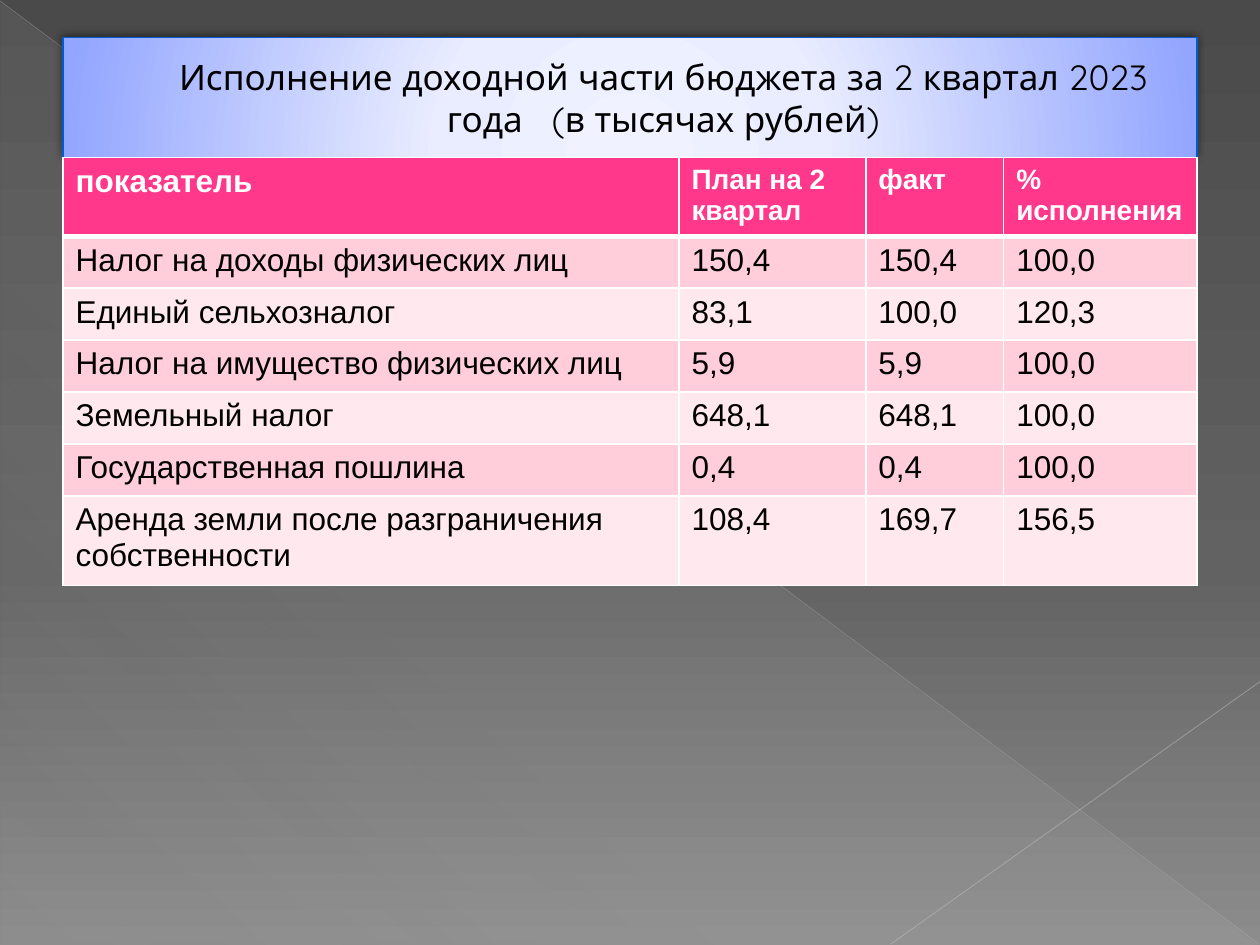
from lxml.etree import SubElement
from pptx import Presentation
from pptx.dml.color import RGBColor
from pptx.enum.shapes import MSO_CONNECTOR, MSO_SHAPE
from pptx.enum.text import MSO_ANCHOR, MSO_AUTO_SIZE, PP_ALIGN
from pptx.oxml import parse_xml
from pptx.oxml.ns import nsdecls, qn
from pptx.util import Pt


def rgb(code):
    return RGBColor.from_string(code)


def node(tag, inner="", attrs=""):
    return parse_xml(f"<a:{tag} {nsdecls('a')} {attrs}>{inner}</a:{tag}>")


def tint(code, alpha=100):
    return f'<a:srgbClr val="{code}"><a:alpha val="{alpha * 1000}"/></a:srgbClr>'


def stroke(tag, code, width):
    fill = f"<a:solidFill>{tint(code)}</a:solidFill>"
    return node(tag, fill, f'w="{Pt(width)}"')


def grade(host, stops, shade):
    """Swap the solid fill inside host for a gradient."""
    marks = "".join(f'<a:gs pos="{pos * 1000}">{tint(*color)}</a:gs>'
                    for pos, *color in stops)
    grad = node("gradFill", f"<a:gsLst>{marks}</a:gsLst>{shade}")
    host.replace(host.find(qn("a:solidFill")), grad)


def slant(angle):
    return f'<a:lin ang="{angle * 60000}" scaled="0"/>'


class Deck:
    black, white, pink = "000000", "FFFFFF", "FF388C"
    bands = "FFCEDA", "FFE8EE"
    face, head = "Arial", "Quicksand"

    def __init__(self):
        self.file = Presentation()
        self.file.slide_width, self.file.slide_height = Pt(720), Pt(540)
        self.slide = self.file.slides.add_slide(self.file.slide_layouts[5])
        self.shapes = self.slide.shapes

    def back(self, stops):
        self.slide.background.fill.solid()
        grade(self.slide.element.xpath(".//p:bgPr")[0], stops, slant(90))

    def wedge(self, box, stops):
        shape = self.shapes.add_shape(MSO_SHAPE.RIGHT_TRIANGLE, *map(Pt, box))
        shape.shadow.inherit = False
        shape.line.fill.background()
        shape.fill.solid()
        grade(shape.element.spPr, stops, slant(133))

    def line(self, ends, color, width, alpha):
        link = self.shapes.add_connector(MSO_CONNECTOR.STRAIGHT, *map(Pt, ends))
        link.line.width = Pt(width)
        link.line.color.rgb = rgb(color)
        mark = link.element.xpath(".//a:ln//a:srgbClr")[0]
        SubElement(mark, qn("a:alpha"), val=str(alpha * 1000))
        SubElement(link.element.spPr, qn("a:effectLst"))

    def title(self, text, box, stops):
        shape = self.shapes.title
        self.shapes.element.append(shape.element)  # bring to the front
        shape.left, shape.top, shape.width, shape.height = map(Pt, box)
        shape.fill.solid()
        grade(shape.element.spPr, stops,
              '<a:path path="circle"><a:fillToRect l="50000" t="155000" '
              'r="50000" b="-55000"/></a:path>')
        shape.line.color.rgb = rgb("005BD3")
        shape.line.width = Pt(0.75)
        shade = node("outerShdw", tint(self.black, 50),
                     f'blurRad="{Pt(5)}" dist="{Pt(2)}" dir="{245 * 60000}" '
                     'rotWithShape="0"')
        SubElement(shape.element.spPr, qn("a:effectLst")).append(shade)
        frame = shape.text_frame
        frame.text = text
        frame.word_wrap = True
        frame.auto_size = MSO_AUTO_SIZE.NONE
        frame.vertical_anchor = MSO_ANCHOR.MIDDLE
        para = frame.paragraphs[0]
        para.alignment = PP_ALIGN.CENTER
        self.font(para, 20, self.black, self.head)
        props = para._p.get_or_add_pPr()
        props.set("marL", str(Pt(38)))
        props.set("indent", "0")
        props.find(qn("a:defRPr")).insert(0, stroke("ln", "B12761", 0.5))

    def font(self, para, size, color, name, bold=False):
        font = para.font
        font.size, font.name, font.bold = Pt(size), name, bold
        font.color.rgb = rgb(color)

    def table(self, spot, cols, rows, data):
        size = sum(cols), sum(rows)
        grid = self.shapes.add_table(len(rows), len(cols),
                                     *map(Pt, (*spot, *size))).table
        for col, width in zip(grid.columns, cols):
            col.width = Pt(width)
        for r, (row, tall, texts) in enumerate(zip(grid.rows, rows, data)):
            row.height = Pt(tall)
            for c, (cell, text) in enumerate(zip(row.cells, texts)):
                self.cell(cell, text, r, c)

    def cell(self, cell, text, r, c):
        top = r == 0
        cell.text = text
        cell.fill.solid()
        cell.fill.fore_color.rgb = rgb(self.pink if top else self.bands[(r - 1) % 2])
        self.font(cell.text_frame.paragraphs[0], 16 if top and c else 18,
                  self.white if top else self.black, self.face, top)
        # The rule under the header is thicker
        widths = {"lnL": 1, "lnR": 1, "lnT": 3 if r == 1 else 1, "lnB": 3 if top else 1}
        props = cell._tc.get_or_add_tcPr()
        for i, (side, width) in enumerate(widths.items()):
            props.insert(i, stroke(side, self.white, width))


def main():
    deck = Deck()

    # Backdrop
    deck.back([(0, "4A4A4A"), (60, "626262"), (100, "8C8C8C")])
    deck.wedge((0.5, 1.2, 718.8, 538.4),
               [(0, "D2D2D2", 10), (70, "D2D2D2", 8), (100, "D2D2D2", 1)])
    deck.line((0, 0.5, 719.5, 539.5), "BFBFBF", 0.39, 35)
    deck.line((720, 389.5, 509, 539.5), "C6C6C6", 0.47, 45)

    # Heading
    deck.title("Исполнение доходной части бюджета за 2 квартал 2023 года   (в тысячах рублей)",
               (36, 21.6, 648, 68.4),
               [(0, "F0F2FF"), (34, "EAEDFF"), (100, "92A5FF")])

    # Budget income
    deck.table((36, 90), (352, 106.8, 78.8, 110.4), (45, *[29.7] * 5, 51.3), [
        ("показатель", "План на 2 квартал", "факт", "% исполнения"),
        ("Налог на доходы физических лиц", "150,4", "150,4", "100,0"),
        ("Единый сельхозналог", "83,1", "100,0", "120,3"),
        ("Налог на имущество физических лиц", "5,9", "5,9", "100,0"),
        ("Земельный налог", "648,1", "648,1", "100,0"),
        ("Государственная пошлина", "0,4", "0,4", "100,0"),
        ("Аренда земли после разграничения собственности", "108,4", "169,7", "156,5"),
    ])
    deck.file.save("out.pptx")


if __name__ == "__main__":
    main()
